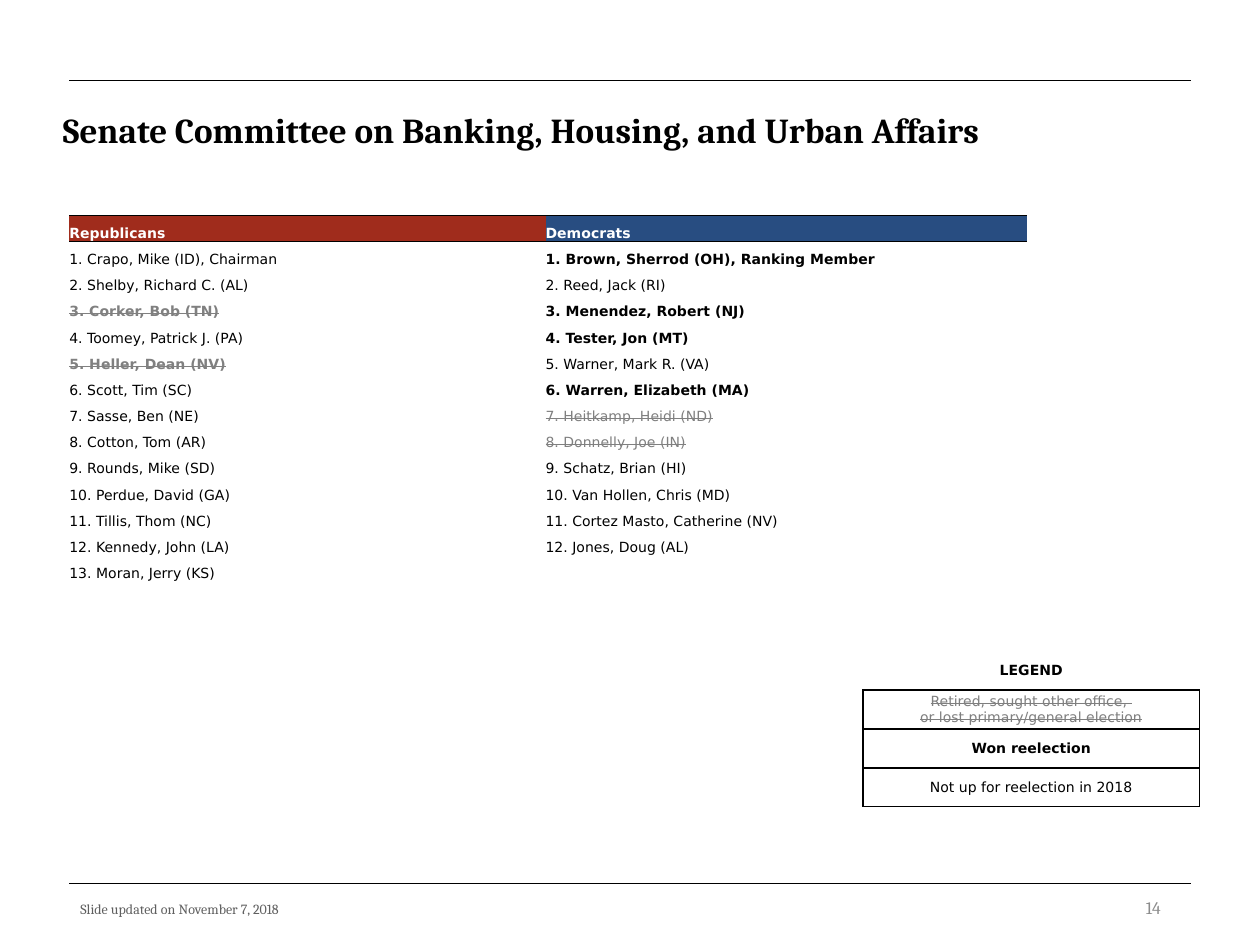
from lxml import etree
from pptx import Presentation
from pptx.dml.color import RGBColor
from pptx.enum.shapes import MSO_CONNECTOR
from pptx.enum.text import MSO_ANCHOR, PP_ALIGN
from pptx.oxml.ns import qn
from pptx.util import Inches, Pt

STRAIGHT = MSO_CONNECTOR.STRAIGHT
TOP, MIDDLE, BOTTOM = MSO_ANCHOR.TOP, MSO_ANCHOR.MIDDLE, MSO_ANCHOR.BOTTOM
LEFT, CENTER, RIGHT = PP_ALIGN.LEFT, PP_ALIGN.CENTER, PP_ALIGN.RIGHT

COLORS = {
    "black": "000000", "white": "FFFFFF", "gone": "808080", "legend_gone": "7F7F7F",
    "footer": "5F5F5F", "number": "8C8C8C", "red": "A02C1C", "blue": "284D81",
}
SERIF, SANS = "Cambria", "DejaVu Sans"
FORMATS = {
    "title": {"name": SERIF, "size": 20, "bold": True, "color": "black"},
    "footer": {"name": SERIF, "size": 8, "color": "footer"},
    "number": {"name": SERIF, "size": 10, "color": "number"},
    "header": {"name": SANS, "size": 8, "bold": True, "color": "white"},
    "safe": {"name": SANS, "size": 8, "bold": False, "color": "black"},
    "won": {"name": SANS, "size": 8, "bold": True, "color": "black"},
    "gone": {"name": SANS, "size": 8, "bold": False, "color": "gone", "strike": True},
    "gone_bold": {"name": SANS, "size": 8, "bold": True, "color": "gone", "strike": True},
    "legend_gone": {"name": SANS, "size": 8, "bold": False, "color": "legend_gone", "strike": True},
}

REPUBLICANS = [
    "Crapo, Mike (ID), Chairman", "Shelby, Richard C. (AL)", "Corker, Bob (TN)",
    "Toomey, Patrick J. (PA)", "Heller, Dean (NV)", "Scott, Tim (SC)",
    "Sasse, Ben (NE)", "Cotton, Tom (AR)", "Rounds, Mike (SD)",
    "Perdue, David (GA)", "Tillis, Thom (NC)", "Kennedy, John (LA)", "Moran, Jerry (KS)",
]
DEMOCRATS = [
    "Brown, Sherrod (OH), Ranking Member", "Reed, Jack (RI)", "Menendez, Robert (NJ)",
    "Tester, Jon (MT)", "Warner, Mark R. (VA)", "Warren, Elizabeth (MA)",
    "Heitkamp, Heidi (ND)", "Donnelly, Joe (IN)", "Schatz, Brian (HI)",
    "Van Hollen, Chris (MD)", "Cortez Masto, Catherine (NV)", "Jones, Doug (AL)",
]
REPUBLICAN_RESULTS = {3: "gone_bold", 5: "gone_bold"}
DEMOCRAT_RESULTS = {1: "won", 3: "won", 4: "won", 6: "won", 7: "gone", 8: "gone"}
LEGEND = [
    ("LEGEND", "won"),
    ("Retired, sought other office, \nor lost primary/general election", "legend_gone"),
    ("Won reelection", "won"),
    ("Not up for reelection in 2018", "safe"),
]


class SlideBuilder:
    columns, rows = 100, 75

    def __init__(self, deck):
        self.deck = deck
        self.page = deck.slides.add_slide(deck.slide_layouts[6])

    def x(self, columns):
        return round(self.deck.slide_width * columns / self.columns)

    def y(self, rows):
        return round(self.deck.slide_height * rows / self.rows)

    def place(self, left, top, width, height):
        return self.x(left), self.y(top), self.x(width), self.y(height)

    def rule(self, left, right, row):
        line = self.page.shapes.add_connector(
            STRAIGHT, self.x(left), self.y(row), self.x(right), self.y(row))
        line.line.width = Pt(0.5)
        line.line.color.rgb = RGBColor.from_string(COLORS["black"])
        etree.SubElement(line._element.spPr, qn("a:effectLst"))

    def fill_text(self, frame, text, style, align=LEFT, spacing=None):
        for index, words in enumerate(text.split("\n")):
            para = frame.add_paragraph() if index else frame.paragraphs[0]
            para.alignment = align
            para.line_spacing = spacing
            if not words:
                end = etree.SubElement(para._p, qn("a:endParaRPr"))
                end.set("sz", str(FORMATS[style]["size"] * 100))
                continue
            span = para.add_run()
            span.text = words
            for key, value in FORMATS[style].items():
                if key == "color":
                    span.font.color.rgb = RGBColor.from_string(COLORS[value])
                elif key == "strike":
                    span._r.get_or_add_rPr().set("strike", "sngStrike")
                else:
                    setattr(span.font, key, Pt(value) if key == "size" else value)

    def text(self, area, text, style, align=LEFT, anchor=TOP, spacing=None):
        box = self.page.shapes.add_textbox(*self.place(*area))
        box.text_frame.word_wrap = True
        box.text_frame.vertical_anchor = anchor
        self.fill_text(box.text_frame, text, style, align, spacing)

    def table(self, left, top, widths, heights):
        area = self.place(left, top, sum(widths), sum(heights))
        table = self.page.shapes.add_table(len(heights), len(widths), *area).table
        table.first_row = table.horz_banding = False
        for column, width in zip(table.columns, widths):
            column.width = self.x(width)
        for row, height in zip(table.rows, heights):
            row.height = self.y(height)
        return table

    def cell(self, cell, text, style, sides="", weight=0.5, fill=None,
             align=LEFT, anchor=BOTTOM, inset=(0, 0)):
        across, down = (Inches(value) for value in inset)
        settings = {"margin_left": across, "margin_right": across, "margin_top": down,
                    "margin_bottom": down, "vertical_anchor": anchor}
        for key, value in settings.items():
            setattr(cell, key, value)
        properties = cell._tc.get_or_add_tcPr()
        for side in "LRTB":
            border = etree.SubElement(properties, qn(f"a:ln{side}"), w=str(Pt(weight)))
            if side in sides:
                paint = etree.SubElement(border, qn("a:solidFill"))
                etree.SubElement(paint, qn("a:srgbClr"), val=COLORS["black"])
            else:
                etree.SubElement(border, qn("a:noFill"))
        if fill:
            cell.fill.solid()
            cell.fill.fore_color.rgb = RGBColor.from_string(COLORS[fill])
        else:
            cell.fill.background()
        self.fill_text(cell.text_frame, text, style, align)


def main():
    deck = Presentation()
    deck.slide_width, deck.slide_height = Inches(10), Inches(7.5)
    slide = SlideBuilder(deck)

    for row in (6.4, 70.1):
        slide.rule(5.5, 94.5, row)
    slide.text((4, 8.5, 92, 7), "Senate Committee on Banking, Housing, and Urban Affairs",
               "title", spacing=0.9)
    slide.text((5.4, 71, 44, 2.4), "Slide updated on November 7, 2018", "footer")
    slide.text((70.6, 70.6, 22.5, 2.9), "14", "number", RIGHT, MIDDLE)

    legend = slide.table(68.5, 51.7, [26.7], [3.08] * len(LEGEND))
    for row, (text, style) in enumerate(LEGEND):
        slide.cell(legend.cell(row, 0), text, style, "LRTB" if row else "B", 1,
                   align=CENTER, anchor=MIDDLE, inset=(0.04, 0.02))

    parties = [
        ("Republicans", "red", REPUBLICANS, REPUBLICAN_RESULTS),
        ("Democrats", "blue", DEMOCRATS, DEMOCRAT_RESULTS),
    ]
    seats = max(len(REPUBLICANS), len(DEMOCRATS))
    roster = slide.table(5.5, 17.1, [37.8, 38.2], [2.08] * (seats + 1))
    for column, (party, color, members, results) in enumerate(parties):
        slide.cell(roster.cell(0, column), party, "header", "TB", fill=color)
        for seat in range(1, seats + 1):
            text = f"{seat}. {members[seat - 1]}" if seat <= len(members) else ""
            slide.cell(roster.cell(seat, column), text, results.get(seat, "safe"),
                       "T" if seat == 1 else "")

    deck.save("out.pptx")


if __name__ == "__main__":
    main()
